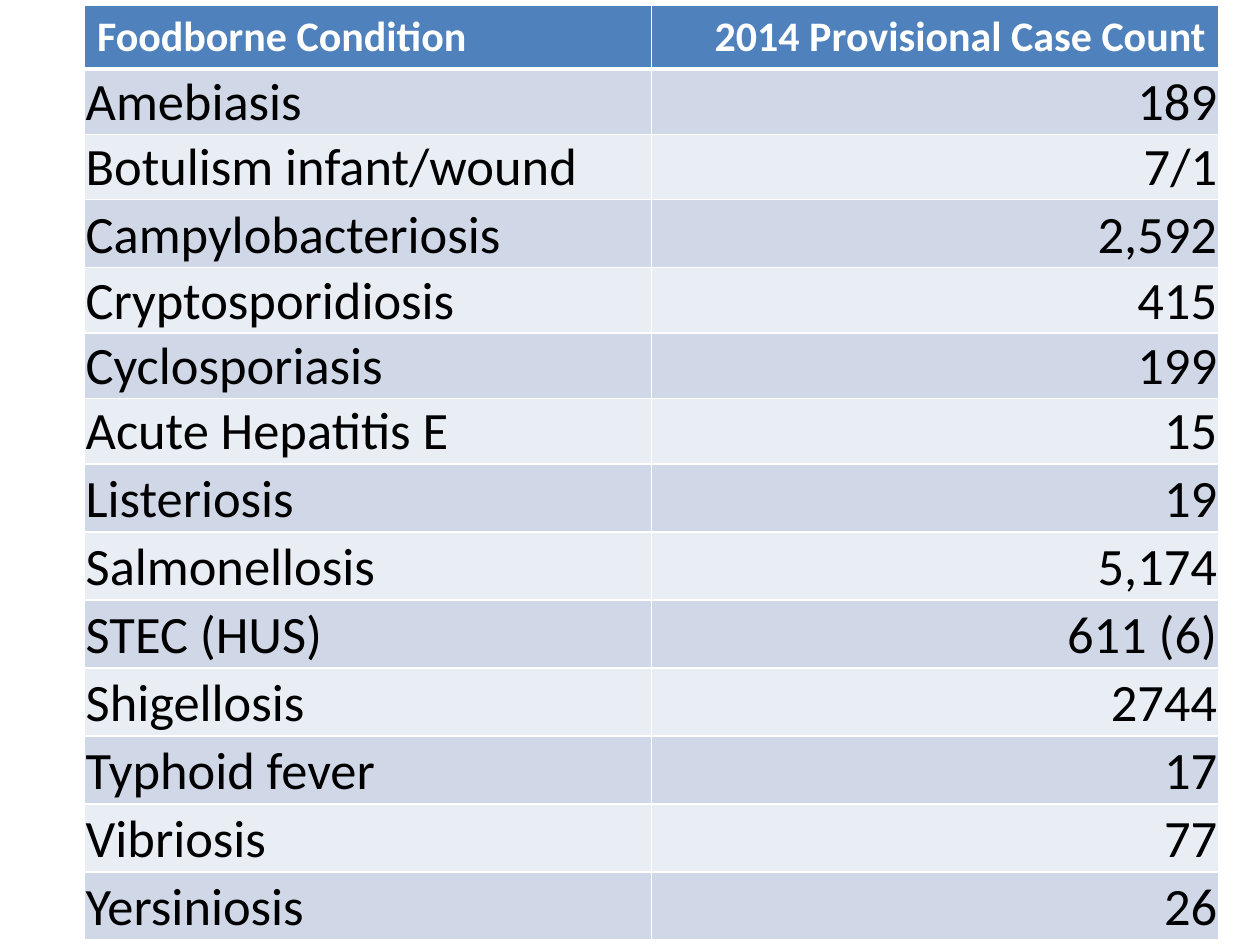
from pptx import Presentation
from pptx.dml.color import RGBColor
from pptx.enum.text import MSO_ANCHOR as Anchor, PP_ALIGN as Align
from pptx.oxml.ns import qn
from pptx.util import Inches, Pt
from lxml.etree import SubElement

WHITE = RGBColor(0xFF, 0xFF, 0xFF)
BLACK = RGBColor(0, 0, 0)
HEADER_BLUE = RGBColor(0x4F, 0x81, 0xBD)
BANDS = (RGBColor(0xD0, 0xD8, 0xE8), RGBColor(0xE9, 0xED, 0xF4))

HEADINGS = ("Foodborne Condition", "2014 Provisional Case Count")
CASE_COUNTS = [
    ("Amebiasis", "189"),
    ("Botulism infant/wound", "7/1"),
    ("Campylobacteriosis", "2,592"),
    ("Cryptosporidiosis", "415"),
    ("Cyclosporiasis", "199"),
    ("Acute Hepatitis E", "15"),
    ("Listeriosis", "19"),
    ("Salmonellosis", "5,174"),
    ("STEC (HUS)", "611 (6)"),
    ("Shigellosis", "2744"),
    ("Typhoid fever", "17"),
    ("Vibriosis", "77"),
    ("Yersiniosis", "26"),
]
ROW_HEIGHTS = [0.4, 0.5, 0.5, 0.54] + [0.5] * 3 + [0.54] * 7
COLUMN_ALIGNMENTS = (Align.LEFT, Align.RIGHT)

HEADER_FONT = {"name": "Calibri", "size": Pt(24), "bold": True}
BODY_FONT = {"name": "Calibri", "size": Pt(30), "bold": False}
BODY_CELL = {
    "vertical_anchor": Anchor.BOTTOM,
    "margin_left": Inches(0.01),
    "margin_right": Inches(0.01),
    "margin_top": Inches(0.01),
    "margin_bottom": Inches(0),
}


def apply_format(target, values):
    for attribute, value in values.items():
        setattr(target, attribute, value)


class SlideBuilder:
    def __init__(self, slide):
        self.slide = slide

    def border(self, cell, top=1, bottom=1):
        """Draw white cell borders; widths are in points."""
        properties = cell._tc.get_or_add_tcPr()
        for side, width in {"L": 1, "R": 1, "T": top, "B": bottom}.items():
            line = SubElement(properties, qn(f"a:ln{side}"), w=str(Pt(width)))
            fill = SubElement(line, qn("a:solidFill"))
            SubElement(fill, qn("a:srgbClr"), val=str(WHITE))

    def cell(self, cell, text, alignment, row):
        is_header = row == 0
        self.border(cell, top=3 if row == 1 else 1, bottom=3 if is_header else 1)
        cell.fill.solid()
        cell.fill.fore_color.rgb = HEADER_BLUE if is_header else BANDS[(row - 1) % 2]
        if not is_header:
            apply_format(cell, BODY_CELL)
        paragraph = cell.text_frame.paragraphs[0]
        paragraph.alignment = alignment
        run = paragraph.add_run()
        run.text = text
        apply_format(run.font, HEADER_FONT if is_header else BODY_FONT)
        run.font.color.rgb = WHITE if is_header else BLACK

    def table(self, rows, left, top, width, row_heights):
        table = self.slide.shapes.add_table(
            len(rows), len(rows[0]), Inches(left), Inches(top),
            Inches(width), Inches(sum(row_heights))).table
        for row, (texts, height) in enumerate(zip(rows, row_heights)):
            table.rows[row].height = Inches(height)
            for column, text in enumerate(texts):
                self.cell(table.cell(row, column), text, COLUMN_ALIGNMENTS[column], row)


def main():
    deck = Presentation()
    deck.slide_width, deck.slide_height = Inches(10), Inches(7.5)
    builder = SlideBuilder(deck.slides.add_slide(deck.slide_layouts[6]))
    builder.table([HEADINGS] + CASE_COUNTS, 0.67, 0.04, 9, ROW_HEIGHTS)
    deck.save("out.pptx")


if __name__ == "__main__":
    main()
